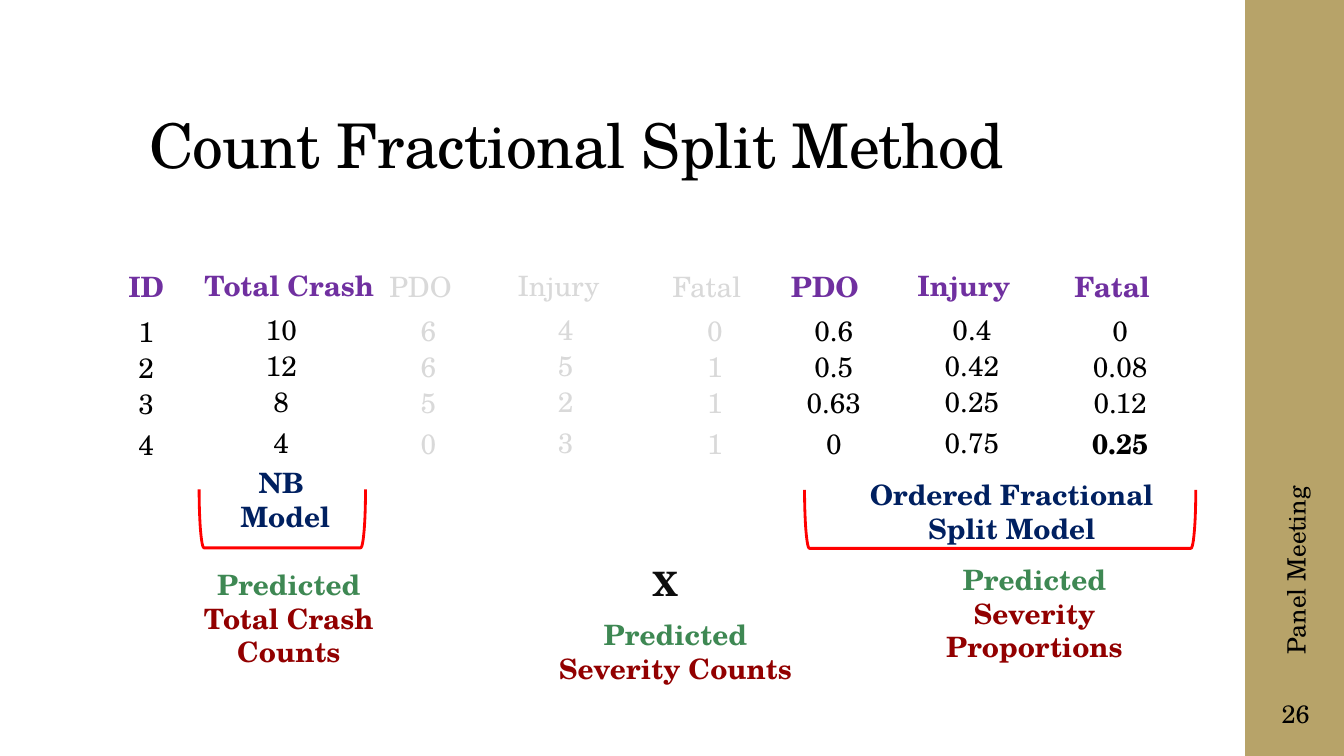
from pptx import Presentation
from pptx.dml.color import RGBColor
from pptx.enum.shapes import MSO_SHAPE as Form
from pptx.enum.text import MSO_ANCHOR as Anchor, PP_ALIGN as Align
from pptx.util import Inches, Pt

FONT = "TeX Gyre Schola"
GOLD, BLACK, GREY, PURPLE = "B7A369", "000000", "D9D9D9", "7030A0"
NAVY, GREEN, MAROON, RED, INK = "002060", "3E8853", "920000", "FF0000", "0D0D0D"

TITLE = "Count Fractional Split Method"
FOOTER, NUMBER = "Panel Meeting", "26"

# name, head centre, cell centre, shift down, active, values
COLUMNS = [
    ("ID", 1.45, 1.45, 0.01, True, ["1", "2", "3", "4"]),
    ("Total Crash", 2.87, 2.79, -0.01, True, ["10", "12", "8", "4"]),
    ("PDO", 4.17, 4.25, 0, False, ["6", "6", "5", "0"]),
    ("Injury", 5.54, 5.61, -0.01, False, ["4", "5", "2", "3"]),
    ("Fatal", 7.01, 7.09, 0, False, ["0", "1", "1", "1"]),
    ("PDO", 8.18, 8.27, 0, True, ["0.6", "0.5", "0.63", "0"]),
    ("Injury", 9.56, 9.64, -0.01, True, ["0.4", "0.42", "0.25", "0.75"]),
    ("Fatal", 11.03, 11.11, 0, True, ["0", "0.08", "0.12", "0.25"]),
]
HEAD, ROWS = 2.62, [3.06, 3.42, 3.78, 4.18]
KEY = "0.25"

LABELS = [
    ((1.62, 4.57, 2.42, 0.77), 20, [("NB ", NAVY), ("Model", NAVY)]),
    ((8.16, 4.69, 3.75, 0.77), 20, [("Ordered Fractional Split Model", NAVY)]),
    ((8.87, 5.53, 2.78, 1.11), 20, [("Predicted", GREEN), ("Severity Proportions", MAROON)]),
    ((1.68, 5.58, 2.37, 1.11), 20, [("Predicted", GREEN), ("Total Crash Counts", MAROON)]),
    ((5.31, 5.54, 2.58, 0.5), 24, [("X", INK)]),
    ((5.31, 6.08, 2.78, 0.77), 20, [("Predicted", GREEN), ("Severity Counts", MAROON)]),
]
BRACKETS = [(2.51, 4.32, 0.58, 1.65), (9.63, 3.21, 0.58, 3.88)]

deck = Presentation()
deck.slide_width, deck.slide_height = Inches(13.33), Inches(7.5)
slide = deck.slides.add_slide(deck.slide_layouts[6])


def paint(target, shade):
    target.rgb = RGBColor.from_string(shade)


def form(kind, spot):
    shape = slide.shapes.add_shape(kind, *map(Inches, spot))
    shape.shadow.inherit = False
    return shape


def write(spot, lines, size=20, bold=False, align=Align.CENTER, anchor=Anchor.TOP):
    box = slide.shapes.add_textbox(*map(Inches, spot))
    frame = box.text_frame
    frame.word_wrap = True
    frame.vertical_anchor = anchor
    for i, (text, shade) in enumerate(lines):
        para = frame.paragraphs[0] if i == 0 else frame.add_paragraph()
        para.alignment = align
        run = para.add_run()
        run.text = text
        run.font.name, run.font.size, run.font.bold = FONT, Pt(size), bold
        paint(run.font.color, shade)
    return box


band = form(Form.RECTANGLE, (12.35, 0, 1, 7.5))
band.fill.solid()
paint(band.fill.fore_color, GOLD)
band.line.fill.background()

title = write((1.38, 0.4, 10.6, 1.45), [(TITLE, BLACK)], 44, align=Align.LEFT, anchor=Anchor.BOTTOM)
para = title.text_frame.paragraphs[0]
para.line_spacing = 0.9
para.runs[0].font._element.set("spc", "-50")

foot = write((10.89, 4.43, 3.92, 0.4), [(FOOTER, BLACK)], 18, align=Align.LEFT, anchor=Anchor.MIDDLE)
foot.rotation = 270
write((12.35, 6.75, 1, 0.65), [(NUMBER, BLACK)], 18, anchor=Anchor.MIDDLE)

for name, mid, axis, shift, live, values in COLUMNS:
    wide = 2.31 if name == "Total Crash" else 1.95
    tint = PURPLE if live else GREY
    write((mid - wide / 2, HEAD + min(shift, 0), wide, 0.44), [(name, tint)], bold=live)
    for top, value in zip(ROWS, values):
        strong = value == KEY and top == ROWS[-1]
        ink = BLACK if live else GREY
        write((axis - 0.855, top + shift, 1.71, 0.44), [(value, ink)], bold=strong)

for spot in BRACKETS:
    brace = form(Form.LEFT_BRACKET, spot)
    brace.rotation = 270
    brace.fill.background()
    paint(brace.line.color, RED)
    brace.line.width = Pt(2)

for spot, size, lines in LABELS:
    write(spot, lines, size, bold=True)

deck.save("out.pptx")
